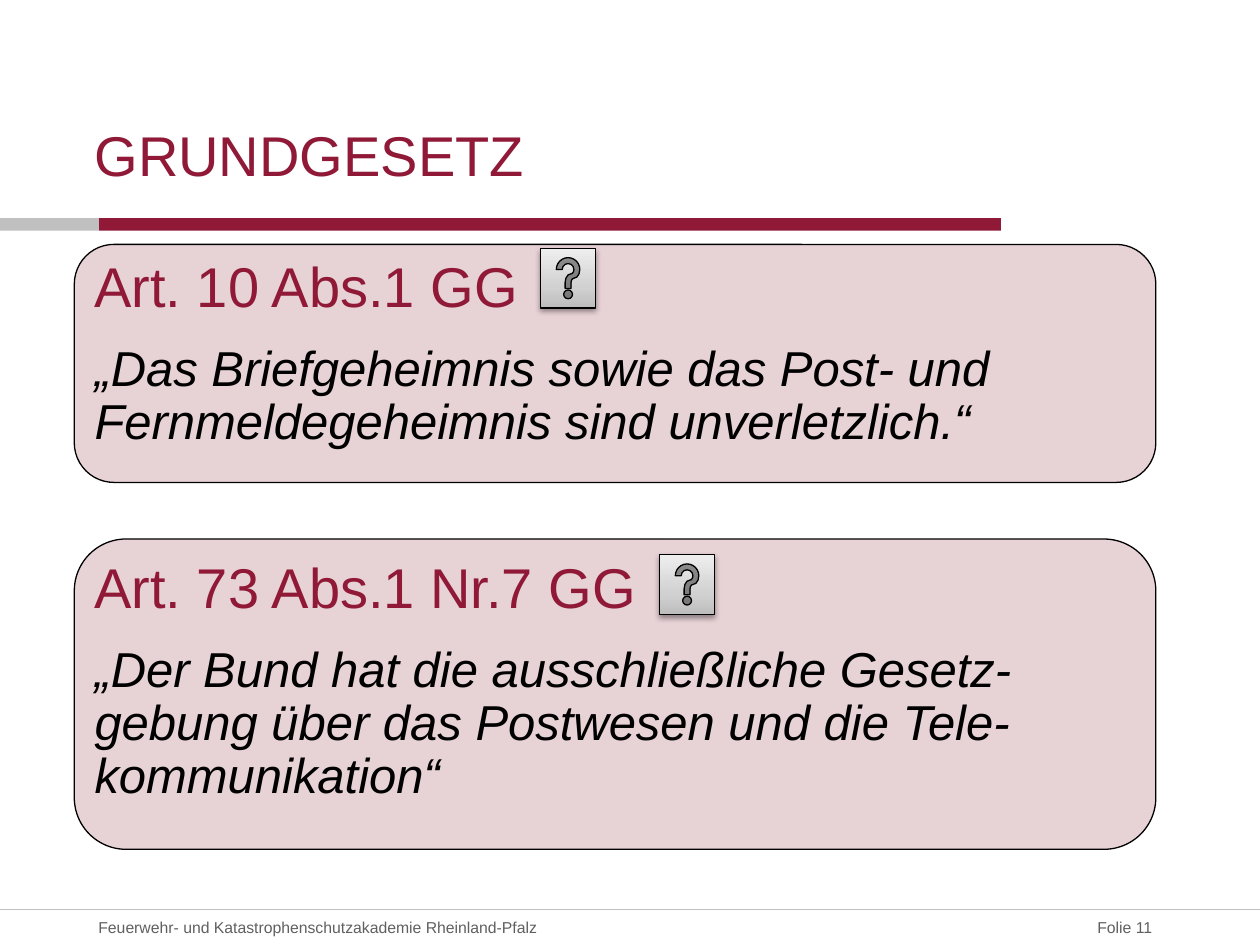
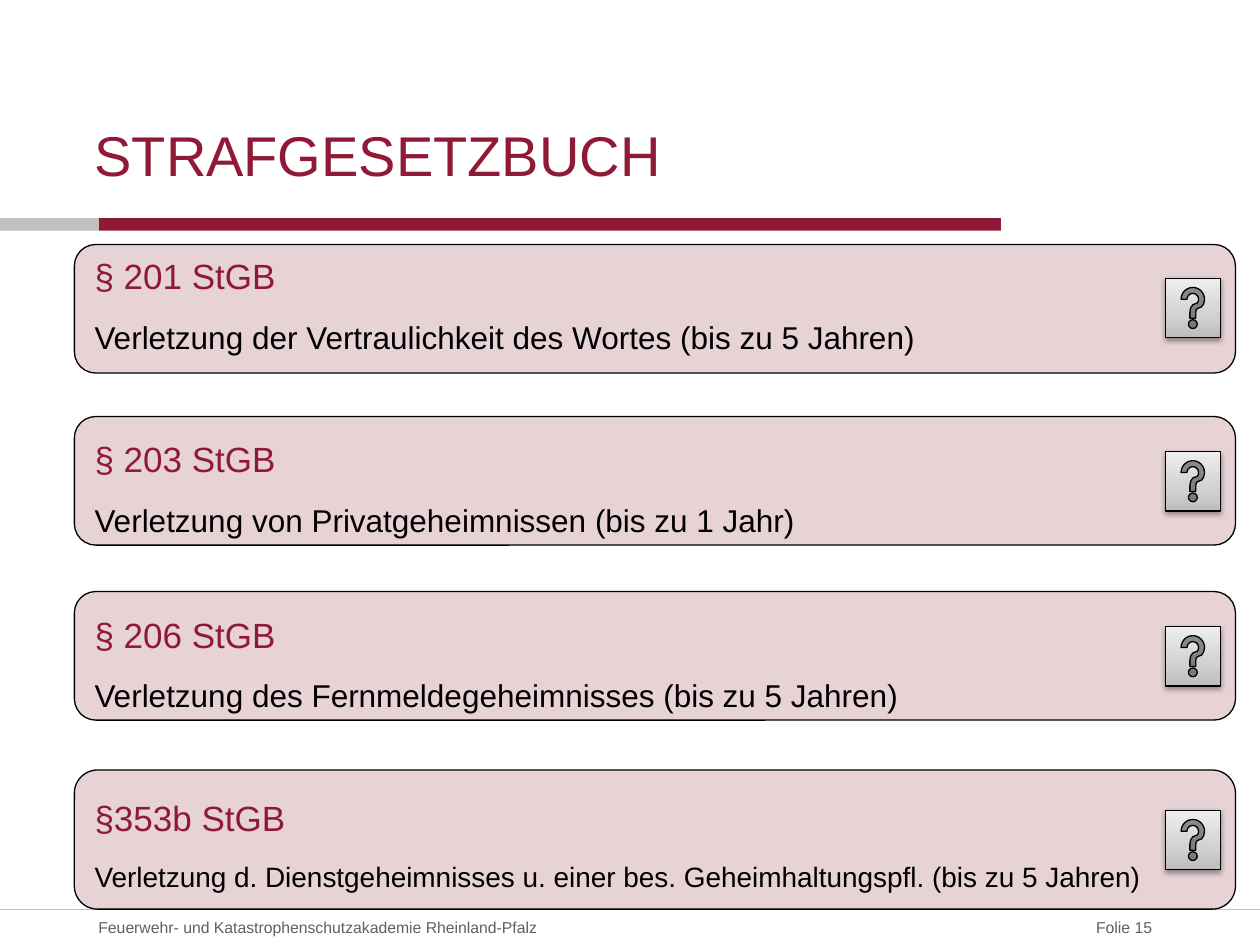
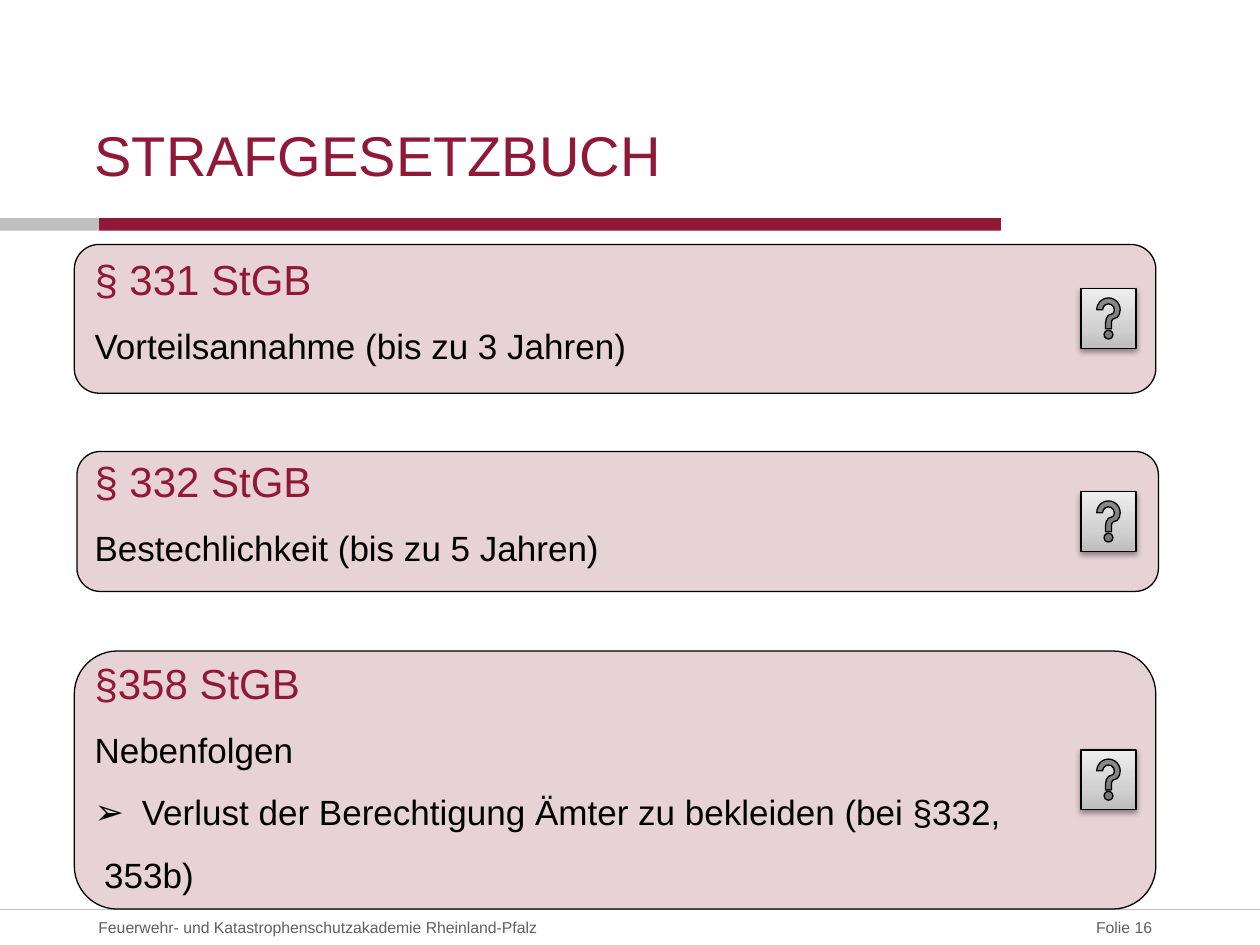
"""Build three slides on postal secrecy and criminal law for a fire service course."""
import pptx
import pptx.dml.color
import pptx.enum.shapes
import pptx.enum.text
import pptx.oxml
import pptx.oxml.ns
import pptx.util

Pt = pptx.util.Pt
SHAPE = pptx.enum.shapes.MSO_SHAPE
ALIGN = pptx.enum.text.PP_ALIGN
ANCHOR = pptx.enum.text.MSO_ANCHOR
qn = pptx.oxml.ns.qn

COLORS = {"wine": "8F1936", "rose": "E7D2D6", "silver": "C0C0C0",
          "grey": "606060", "black": "000000"}
BUTTON_STOPS = [(0, "BDBDBD"), (35, "D1D1D1"), (100, "EEEEEE")]
FONT = "Arial"
FOOTER = "Feuerwehr- und Katastrophenschutzakademie Rheinland-Pfalz"
LINE_SPACING = 0.9
LINE_HEIGHT = 1.2
GAP = 14
CARD_LEFT = 42.5
BUTTON_SIZE = (31.3, 34)

PAGES = [
    {"title": "GRUNDGESETZ", "number": 11, "body_height": 338,
     "card_width": 618, "heading_size": 32, "text_size": 28, "italic": True,
     "sections": [
         {"heading": "Art. 10 Abs.1 GG", "card": (139.7, 136), "button": (309, 142),
          "lines": ["„Das Briefgeheimnis sowie das Post- und "
                    "Fernmeldegeheimnis sind unverletzlich.“"]},
         {"heading": "Art. 73 Abs.1 Nr.7 GG", "card": (308, 177.3), "button": (377, 317),
          "lines": ["„Der Bund hat die ausschließliche Gesetz-gebung über das "
                    "Postwesen und die Tele-kommunikation“"]}]},
    {"title": "STRAFGESETZBUCH", "number": 15, "body_height": 360,
     "card_width": 663.5, "heading_size": 20, "text_size": 18,
     "sections": [
         {"heading": "§ 201 StGB", "card": (139.7, 73.5), "button": (666, 159),
          "lines": ["Verletzung der Vertraulichkeit des Wortes (bis zu 5 Jahren)"]},
         {"heading": "§ 203 StGB", "card": (238, 73.5), "button": (666, 258),
          "lines": ["Verletzung von Privatgeheimnissen (bis zu 1 Jahr)"]},
         {"heading": "§ 206 StGB", "card": (338, 73.5), "button": (666, 358),
          "lead": 16,
          "lines": ["Verletzung des Fernmeldegeheimnisses (bis zu 5 Jahren)"]},
         {"heading": "§353b StGB", "card": (440, 79.5), "button": (666, 463),
          "text_size": 16,
          "lines": ["Verletzung d. Dienstgeheimnisses u. einer bes. "
                    "Geheimhaltungspfl. (bis zu 5 Jahren)"]}]},
    {"title": "STRAFGESETZBUCH", "number": 16, "body_height": 360,
     "card_width": 618, "heading_size": 24, "text_size": 20,
     "sections": [
         {"heading": "§ 331 StGB", "card": (139.7, 85), "button": (617.8, 165),
          "lines": ["Vorteilsannahme (bis zu 3 Jahren)"]},
         {"heading": "§ 332 StGB", "card": (258, 80), "button": (617.8, 281),
          "card_left": 44, "lines": ["Bestechlichkeit (bis zu 5 Jahren)"]},
         {"heading": "§358 StGB", "card": (372, 147.5), "button": (617.8, 428.5),
          "lines": ["Nebenfolgen",
                    {"text": "Verlust der Berechtigung Ämter zu bekleiden (bei §332,",
                     "bullet": "➢", "indent": 27},
                    {"text": "353b)", "indent": 5.5}]}]},
]


def rgb(name):
    return pptx.dml.color.RGBColor.from_string(COLORS[name])


def place(shape, left, top, width, height):
    shape.left, shape.top, shape.width, shape.height = map(Pt, (left, top, width, height))


def prepare_frame(shape, anchor, right=0):
    frame = shape.text_frame
    frame.word_wrap = True
    frame.auto_size = pptx.enum.text.MSO_AUTO_SIZE.NONE
    frame.vertical_anchor = anchor
    frame.margin_left = frame.margin_top = frame.margin_bottom = 0
    frame.margin_right = Pt(right)
    return frame


def write(frame, text, size, color="black", italic=False, align=ALIGN.LEFT,
          before=0, spacing=1.0, bullet=None, indent=0):
    """Fill the first paragraph of a frame if it is empty, else append one."""
    para = frame.paragraphs[0]
    if para.runs:
        para = frame.add_paragraph()
    properties = para._p.get_or_add_pPr()
    properties.set("marL", str(Pt(indent)))
    properties.set("indent", str(-Pt(indent) if bullet else 0))
    mark = pptx.oxml.parse_xml(
        '<a:%s xmlns:a="http://schemas.openxmlformats.org/drawingml/2006/main"/>'
        % ("buChar" if bullet else "buNone"))
    if bullet:
        mark.set("char", bullet)
    properties.append(mark)
    para.alignment = align
    para.line_spacing = spacing
    para.space_before = Pt(before)
    para.space_after = Pt(0)
    span = para.add_run()
    span.text = text
    span.font.name = FONT
    span.font.size = Pt(size)
    span.font.bold = False
    span.font.italic = italic
    span.font.color.rgb = rgb(color)


def add_panel(page, kind, bounds, fill, outlined=False):
    panel = page.shapes.add_shape(kind, *map(Pt, bounds))
    panel.shadow.inherit = False
    panel.fill.solid()
    panel.fill.fore_color.rgb = rgb(fill)
    if outlined:
        panel.line.color.rgb = rgb("black")
        panel.line.width = Pt(0.75)
    else:
        panel.line.fill.background()
    return panel


def add_help_button(page, left, top):
    button = add_panel(page, SHAPE.ACTION_BUTTON_HELP, (left, top, *BUTTON_SIZE),
                       "silver", outlined=True)
    button.fill.gradient()
    button.fill.gradient_angle = 90
    properties = button._element.spPr
    stops = properties.find(".//" + qn("a:gsLst"))
    for stop in list(stops):
        stops.remove(stop)
    for position, color in BUTTON_STOPS:
        stop = stops.makeelement(qn("a:gs"), {"pos": str(position * 1000)})
        stop.append(stop.makeelement(qn("a:srgbClr"), {"val": color}))
        stops.append(stop)
    effects = properties.find(qn("a:effectLst"))
    effects.append(pptx.oxml.parse_xml(
        '<a:outerShdw xmlns:a="http://schemas.openxmlformats.org/drawingml/2006/main" '
        'blurRad="40000" dist="20000" dir="5400000" rotWithShape="0">'
        '<a:srgbClr val="000000"><a:alpha val="38000"/></a:srgbClr></a:outerShdw>'))


def add_label(page, text, bounds, align=ALIGN.LEFT, right=0):
    box = page.shapes.add_textbox(*map(Pt, bounds))
    write(prepare_frame(box, ANCHOR.MIDDLE, right), text, 9, color="grey", align=align)
    return box


def decorate_layout(page, layout):
    """Draw the bands and footer once and hand them to the layout."""
    rule = page.shapes.add_connector(
        pptx.enum.shapes.MSO_CONNECTOR.STRAIGHT, Pt(0), Pt(519.7), Pt(720), Pt(519.7))
    rule.line.color.rgb = rgb("silver")
    rule.line.width = Pt(0.75)
    properties = rule._element.spPr
    properties.append(properties.makeelement(qn("a:effectLst"), {}))
    parts = [add_panel(page, SHAPE.RECTANGLE, (0, 124.7, 56.6, 7.2), "silver"),
             add_panel(page, SHAPE.RECTANGLE, (56.6, 124.7, 515.4, 7.2), "wine"),
             rule,
             add_label(page, FOOTER, (56.2, 520, 397, 20))]
    for number, part in enumerate(parts, start=100):
        part._element.find(".//" + qn("p:cNvPr")).set("id", str(number))
        layout.shapes._spTree.append(part._element)


def fill_body(frame, content):
    before = 0
    for section in content["sections"]:
        if before:
            lead = section.get("lead", content["heading_size"])
            before = round(2 * GAP + lead * LINE_HEIGHT * LINE_SPACING, 1)
        write(frame, section["heading"], content["heading_size"], color="wine",
              before=before, spacing=LINE_SPACING)
        before = GAP
        for line in section["lines"]:
            options = line if isinstance(line, dict) else {"text": line}
            write(frame, size=section.get("text_size", content["text_size"]),
                  italic=content.get("italic", False), before=GAP,
                  spacing=LINE_SPACING, **options)


def build_page(page, content):
    title, body = page.placeholders
    place(title, 54, 34.5, 460, 73)
    write(prepare_frame(title, ANCHOR.BOTTOM), content["title"], 32, color="wine")
    place(body, 54, 148.3, 609, content["body_height"])
    fill_body(prepare_frame(body, ANCHOR.TOP), content)
    for section in content["sections"]:
        top, height = section["card"]
        bounds = (section.get("card_left", CARD_LEFT), top, content["card_width"], height)
        card = add_panel(page, SHAPE.ROUNDED_RECTANGLE, bounds, "rose", outlined=True)
        page.shapes._spTree.insert(2, card._element)
        add_help_button(page, *section["button"])
    add_label(page, f"Folie {content['number']}", (572, 520, 91, 20),
              align=ALIGN.RIGHT, right=4.6)


def main():
    deck = pptx.Presentation()
    deck.slide_width, deck.slide_height = Pt(720), Pt(540)
    layout = deck.slide_layouts[1]
    for index, content in enumerate(PAGES):
        page = deck.slides.add_slide(layout)
        if index == 0:
            decorate_layout(page, layout)
        build_page(page, content)
    deck.save("out.pptx")


if __name__ == "__main__":
    main()
